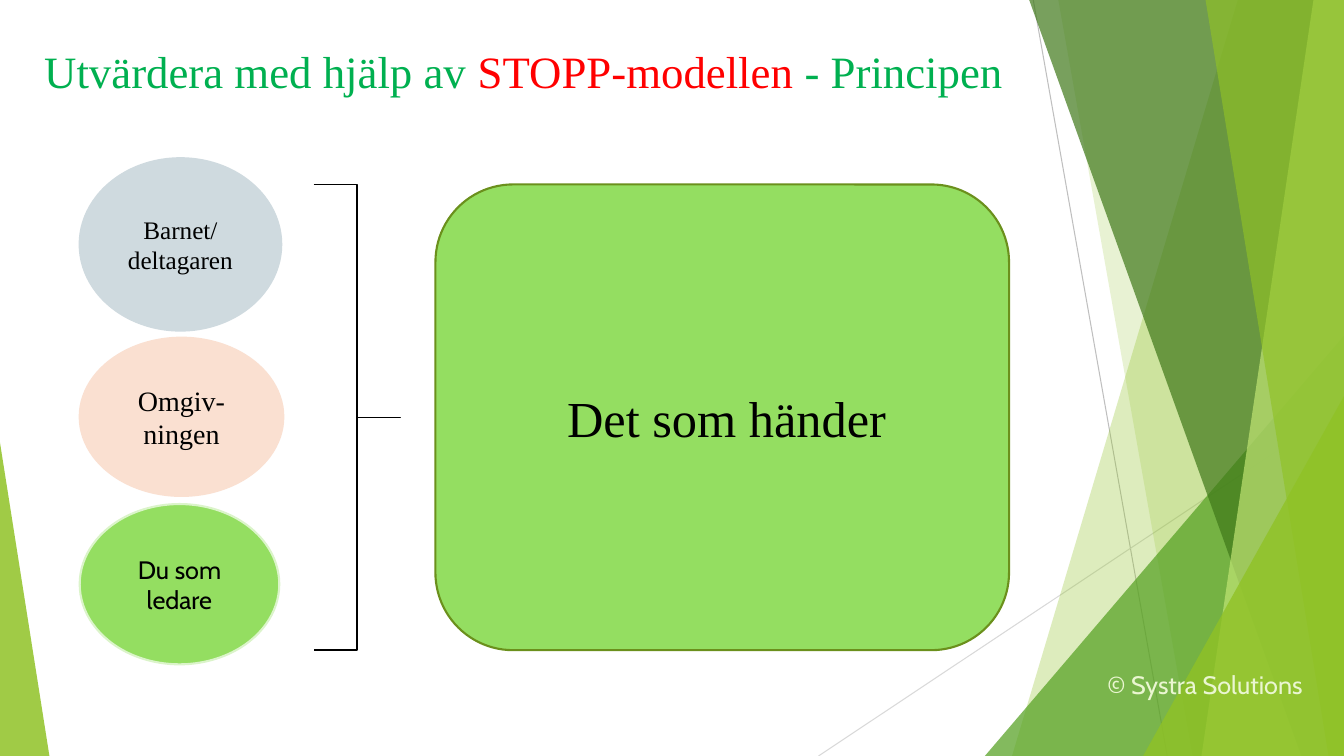
from dataclasses import dataclass

from lxml.etree import SubElement
from pptx import Presentation
from pptx.dml.color import RGBColor
from pptx.enum.shapes import MSO_CONNECTOR, MSO_SHAPE
from pptx.enum.text import MSO_ANCHOR, PP_ALIGN
from pptx.oxml.ns import qn
from pptx.util import Emu, Inches, Pt

SERIF, SANS = "Times New Roman", "Cabin"
BLACK, GREEN, RED = "000000", "00B050", "FF0000"
LIME, LEAF = "90C226", "94DE61"


# All lengths are percentages of the slide's width and height
@dataclass
class Area:
    left: float
    top: float
    width: float
    height: float


@dataclass
class Ray:
    start: tuple[float, float]
    end: tuple[float, float]
    color: str


@dataclass
class Band:
    """Slanted left edge; the rest reaches the slide's right edge."""
    top_left: float
    bottom_left: float
    color: str
    opacity: int


@dataclass
class Wedge:
    area: Area
    apex: float
    color: str
    opacity: int


@dataclass
class Words:
    text: str
    size: int
    font: str = SERIF
    color: str = BLACK


@dataclass
class Bubble:
    kind: MSO_SHAPE
    area: Area
    fill: str
    outline: str
    words: list[Words]


RAYS = [
    Ray((76.88, 0), (86.85, 100), "BFBFBF"),
    Ray((100, 53.73), (60.9, 100), "D9D9D9"),
]
FACETS = [
    Band(92.1, 75.3, LIME, 30),
    Band(78.75, 88.73, LIME, 20),
    Wedge(Area(73.28, 44.4, 26.72, 55.6), 1, "54A021", 72),
    Band(76.58, 96.83, "3F7819", 70),
    Band(97.73, 89.4, "C0E474", 70),
    Band(89.7, 98.85, LIME, 65),
    Wedge(Area(85.05, 52.4, 14.95, 47.6), 1, LIME, 80),
    Wedge(Area(0, 58.53, 3.68, 41.47), 0, LIME, 85),
]
BUBBLES = [
    Bubble(MSO_SHAPE.ROUNDED_RECTANGLE, Area(32.4, 24.4, 42.68, 61.6), LEAF, "6B901C",
           [Words(" ", 28, SANS), Words("Det som händer", 36)]),
    Bubble(MSO_SHAPE.OVAL, Area(5.93, 20.93, 15, 22.8), "CFDADF", "CFDADF",
           [Words("Barnet/ deltagaren", 18)]),
    Bubble(MSO_SHAPE.OVAL, Area(5.93, 44.67, 15.15, 20.93), "FAE0D1", "FAE0D1",
           [Words("Omgiv-ningen", 20)]),
    Bubble(MSO_SHAPE.OVAL, Area(5.93, 66.67, 14.85, 21.2), LEAF, "DBF4CA",
           [Words("Du som ledare", 18, SANS)]),
]
TITLE = [
    Words("Utvärdera med hjälp av ", 32, color=GREEN),
    Words("STOPP-modellen ", 32, color=RED),
    Words("- Principen", 32, color=GREEN),
]

deck = Presentation()
deck.slide_width, deck.slide_height = Inches(13.333), Inches(7.5)
page = deck.slides.add_slide(deck.slide_layouts[6])


def across(percent: float) -> Emu:
    return Emu(round(deck.slide_width * percent / 100))


def down(percent: float) -> Emu:
    return Emu(round(deck.slide_height * percent / 100))


def place(area: Area) -> tuple[Emu, Emu, Emu, Emu]:
    return across(area.left), down(area.top), across(area.width), down(area.height)


def rgb(color: str) -> RGBColor:
    return RGBColor.from_string(color)


def paint(shape, color: str, opacity: int = 100) -> None:
    shape.shadow.inherit = False
    shape.fill.solid()
    shape.fill.fore_color.rgb = rgb(color)
    if opacity < 100:
        tint = shape.fill._xPr.find(qn("a:solidFill"))[0]
        SubElement(tint, qn("a:alpha")).set("val", str(opacity * 1000))


def outline(shape, color: str, width: float) -> None:
    shape.line.color.rgb = rgb(color)
    shape.line.width = Pt(width)


def write(box, words: list[Words], align: PP_ALIGN, anchor: MSO_ANCHOR, wrap: bool = True) -> None:
    frame = box.text_frame
    frame.word_wrap = wrap
    frame.vertical_anchor = anchor
    para = frame.paragraphs[0]
    para.alignment = align
    for part in words:
        span = para.add_run()
        span.text = part.text
        span.font.size = Pt(part.size)
        span.font.name = part.font
        span.font.color.rgb = rgb(part.color)


def draw_ray(ray: Ray) -> None:
    line = page.shapes.add_connector(
        MSO_CONNECTOR.STRAIGHT, across(ray.start[0]), down(ray.start[1]),
        across(ray.end[0]), down(ray.end[1]))
    outline(line, ray.color, 0.75)
    SubElement(line._element.spPr, qn("a:effectLst"))


def draw_facet(facet: Band | Wedge) -> None:
    if isinstance(facet, Band):
        outer = [(100, 0), (100, 100), (facet.bottom_left, 100)]
        builder = page.shapes.build_freeform(across(facet.top_left), 0)
        builder.add_line_segments([(across(x), down(y)) for x, y in outer], close=True)
        shape = builder.convert_to_shape()
    else:
        shape = page.shapes.add_shape(MSO_SHAPE.ISOSCELES_TRIANGLE, *place(facet.area))
        shape.adjustments[0] = facet.apex
    paint(shape, facet.color, facet.opacity)
    shape.line.fill.background()


def draw_bubble(bubble: Bubble) -> None:
    shape = page.shapes.add_shape(bubble.kind, *place(bubble.area))
    paint(shape, bubble.fill)
    outline(shape, bubble.outline, 1.5)
    write(shape, bubble.words, PP_ALIGN.CENTER, MSO_ANCHOR.MIDDLE)


# Faceted backdrop
for ray in RAYS:
    draw_ray(ray)
for facet in FACETS:
    draw_facet(facet)

# Title
title = page.shapes.add_textbox(*place(Area(2.55, 5.07, 80.25, 19.33)))
write(title, TITLE, PP_ALIGN.LEFT, MSO_ANCHOR.TOP)

# Bracket that gathers the three circles
bracket = page.shapes.add_shape(MSO_SHAPE.RIGHT_BRACE, *place(Area(23.33, 24.4, 6.45, 61.6)))
bracket.adjustments[0], bracket.adjustments[1] = 0, 0.5
bracket.shadow.inherit = False
bracket.fill.background()
outline(bracket, BLACK, 1)

# Event box and circles
for bubble in BUBBLES:
    draw_bubble(bubble)

# Copyright line
rights = page.shapes.add_textbox(*place(Area(80.93, 87.87, 16.73, 5.33)))
write(rights, [Words("© Systra Solutions", 18, SANS, "EAF6D1")],
      PP_ALIGN.RIGHT, MSO_ANCHOR.TOP, wrap=False)

deck.save("out.pptx")
